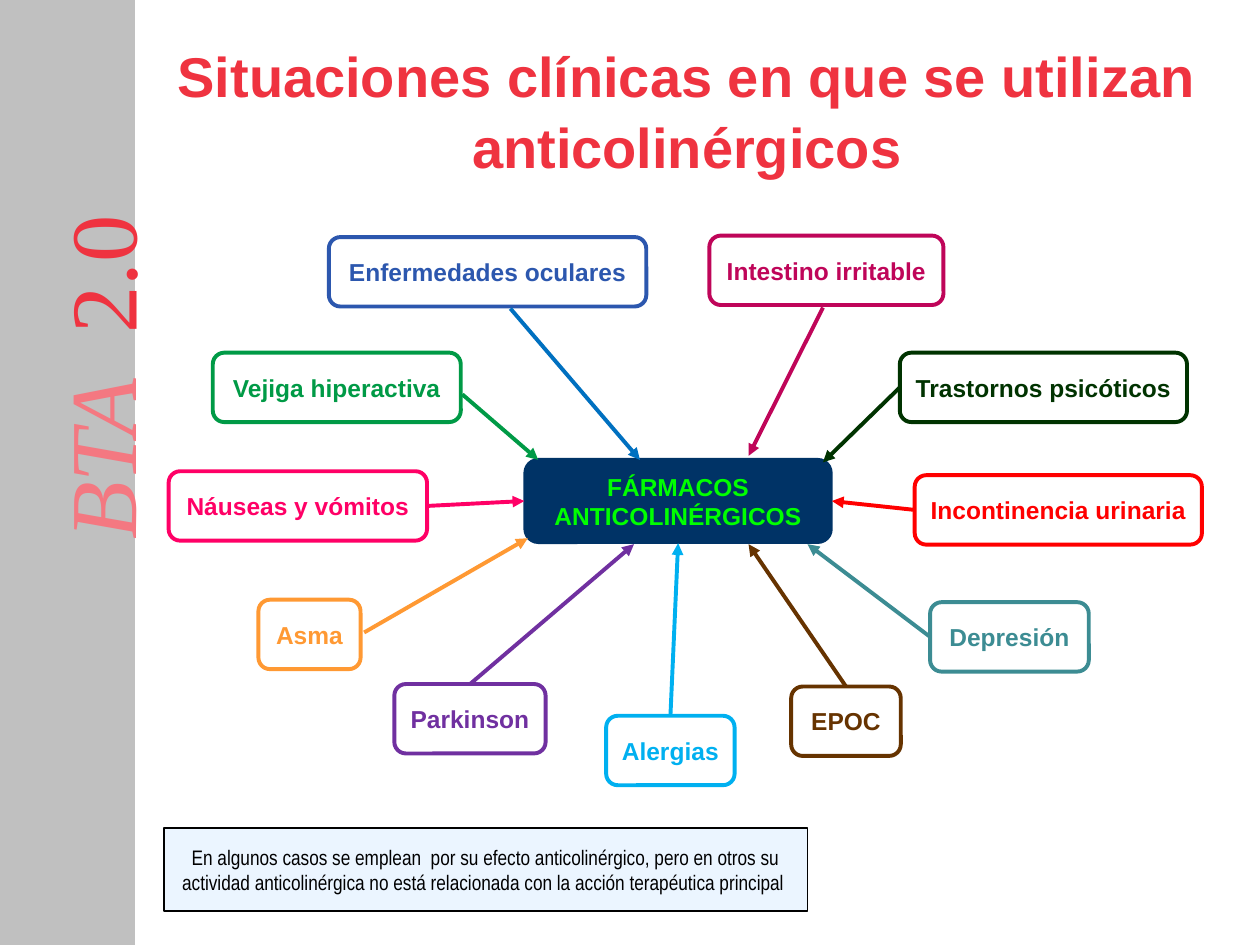
from typing import NamedTuple, Optional

from pptx import Presentation
from pptx.dml.color import RGBColor
from pptx.enum import shapes, text
from pptx.oxml.ns import qn
from pptx.util import Cm, Pt
from lxml import etree

COLORS = {
    "gray": "C0C0C0", "salmon": "F47881", "coral": "EF3340", "navy": "003366",
    "lime": "00FF00", "teal": "3C8C93", "green": "009A46", "red": "FF0000",
    "orange": "FF9933", "purple": "7030A0", "pink": "FF0066", "forest": "003300",
    "magenta": "BF0559", "cyan": "00B0F0", "blue": "2C57AE", "azure": "0070C0",
    "brown": "663300", "ice": "EBF5FF", "black": "000000",
}
TOP, LEFT, BOTTOM, RIGHT = range(4)
TOPIC_HEIGHT = 1.4
RECT = shapes.MSO_SHAPE.RECTANGLE
ROUND = shapes.MSO_SHAPE.ROUNDED_RECTANGLE


class Box(NamedTuple):
    """Position and size in centimetres."""
    left: float
    top: float
    width: float
    height: float


class Topic(NamedTuple):
    """A labelled box and its arrow; a side number joins the arrow to that side."""
    label: str
    color: str
    left: float
    top: float
    width: float
    start: tuple[float, float] | int
    end: tuple[float, float] | int
    arrow_color: Optional[str] = None


TOPICS = [
    Topic("Enfermedades oculares", "blue", 6.63, 4.78, 6.4, (10.29, 6.22), (12.9, 9.27), "azure"),
    Topic("Intestino irritable", "magenta", 14.3, 4.75, 4.72, (16.59, 6.2), (15.09, 9.19)),
    Topic("Vejiga hiperactiva", "green", 4.29, 7.11, 5, (9.32, 7.95), (10.85, 9.27)),
    Topic("Trastornos psicóticos", "forest", 18.14, 7.11, 5.79, LEFT, (16.59, 9.32)),
    Topic("Náuseas y vómitos", "pink", 3.4, 9.5, 5.21, RIGHT, LEFT),
    Topic("Incontinencia urinaria", "red", 18.44, 9.58, 5.79, LEFT, RIGHT),
    Topic("Asma", "orange", 5.21, 12.09, 2.06, (7.34, 12.75), (10.64, 10.85)),
    Topic("Parkinson", "purple", 7.95, 13.79, 3.05, TOP, (12.78, 10.97)),
    Topic("Alergias", "cyan", 12.22, 14.43, 2.59, TOP, BOTTOM),
    Topic("EPOC", "brown", 15.95, 13.84, 2.21, TOP, (15.09, 10.97)),
    Topic("Depresión", "teal", 18.75, 12.14, 3.2, LEFT, (16.28, 10.97)),
]


def rgb(name: str) -> RGBColor:
    return RGBColor.from_string(COLORS[name])


def set_font(font, name: str, size: float, color: str, bold: bool = False) -> None:
    font.name, font.size, font.bold = name, Pt(size), bold
    font.color.rgb = rgb(color)


def write(sp, label: str, font: str, size: float, color: str,
          bold: bool = False, wrap: bool = True):
    """Put one centred paragraph in the middle of a shape."""
    tf = sp.text_frame
    tf.word_wrap = wrap
    tf.vertical_anchor = text.MSO_ANCHOR.MIDDLE
    p = tf.paragraphs[0]
    p.text = label
    p.alignment = text.PP_ALIGN.CENTER
    set_font(p.font, font, size, color, bold)
    return p


def add_box(s, kind, box: Box, line: str, weight: float, fill: Optional[str] = None):
    sp = s.shapes.add_shape(kind, *map(Cm, box))
    sp.shadow.inherit = False
    if fill:
        sp.fill.solid()
        sp.fill.fore_color.rgb = rgb(fill)
    else:
        sp.fill.background()
    sp.line.color.rgb = rgb(line)
    sp.line.width = Pt(weight)
    return sp


def add_topic(s, topic: Topic):
    box = Box(topic.left, topic.top, topic.width, TOPIC_HEIGHT)
    sp = add_box(s, ROUND, box, topic.color, 2.25)
    write(sp, topic.label, "Arial", 14, topic.color, bold=True, wrap=False)
    return sp


def add_arrow(s, topic: Topic, source, hub) -> None:
    """Draw the arrow from a topic box to the hub."""
    start_joined = isinstance(topic.start, int)
    end_joined = isinstance(topic.end, int)
    start = (0, 0) if start_joined else topic.start
    end = (0, 0) if end_joined else topic.end
    c = s.shapes.add_connector(shapes.MSO_CONNECTOR.STRAIGHT, *map(Cm, (*start, *end)))
    if start_joined:
        c.begin_connect(source, topic.start)
    if end_joined:
        c.end_connect(hub, topic.end)
    c.line.color.rgb = rgb(topic.arrow_color or topic.color)
    c.line.width = Pt(2.25)
    etree.SubElement(c.line._get_or_add_ln(), qn("a:tailEnd"), type="triangle")
    etree.SubElement(c._element.spPr, qn("a:effectLst"))


def add_sidebar(s) -> None:
    add_box(s, RECT, Box(0, 0, 2.72, 19.05), "gray", 0.75, "gray")
    sp = s.shapes.add_textbox(*map(Cm, Box(-1.96, 5.38, 8.2, 3.3)))
    sp.rotation = 270
    tf = sp.text_frame
    tf.word_wrap = True
    tf.margin_top = Cm(0.36)
    p = tf.paragraphs[0]
    for label, color, italic in (("BTA  ", "salmon", True), ("2.0", "coral", False)):
        r = p.add_run()
        r.text = label
        set_font(r.font, "Times New Roman", 54, color)
        r.font.italic = italic


def main() -> None:
    prs = Presentation()
    prs.slide_width, prs.slide_height = Cm(25.4), Cm(19.05)
    s = prs.slides.add_slide(prs.slide_layouts[6])

    add_sidebar(s)
    title = s.shapes.add_textbox(*map(Cm, Box(2.9, 0.69, 21.9, 3)))
    p = write(title, "Situaciones clínicas en que se utilizan anticolinérgicos",
              "Arial", 32, "coral", bold=True)
    p.line_spacing = 1.06

    hub = add_box(s, ROUND, Box(10.57, 9.25, 6.2, 1.7), "navy", 1, "navy")
    write(hub, "FÁRMACOS ANTICOLINÉRGICOS", "Arial", 14, "lime", bold=True)
    boxes = [add_topic(s, topic) for topic in TOPICS]
    for topic, box in zip(TOPICS, boxes):
        add_arrow(s, topic, box, hub)

    note = add_box(s, RECT, Box(3.3, 16.69, 12.98, 1.68), "black", 1, "ice")
    write(note, "En algunos casos se emplean  por su efecto anticolinérgico, pero en otros su "
          "actividad anticolinérgica no está relacionada con la acción terapéutica principal ",
          "Arial Narrow", 12, "black")
    prs.save("out.pptx")


if __name__ == "__main__":
    main()
